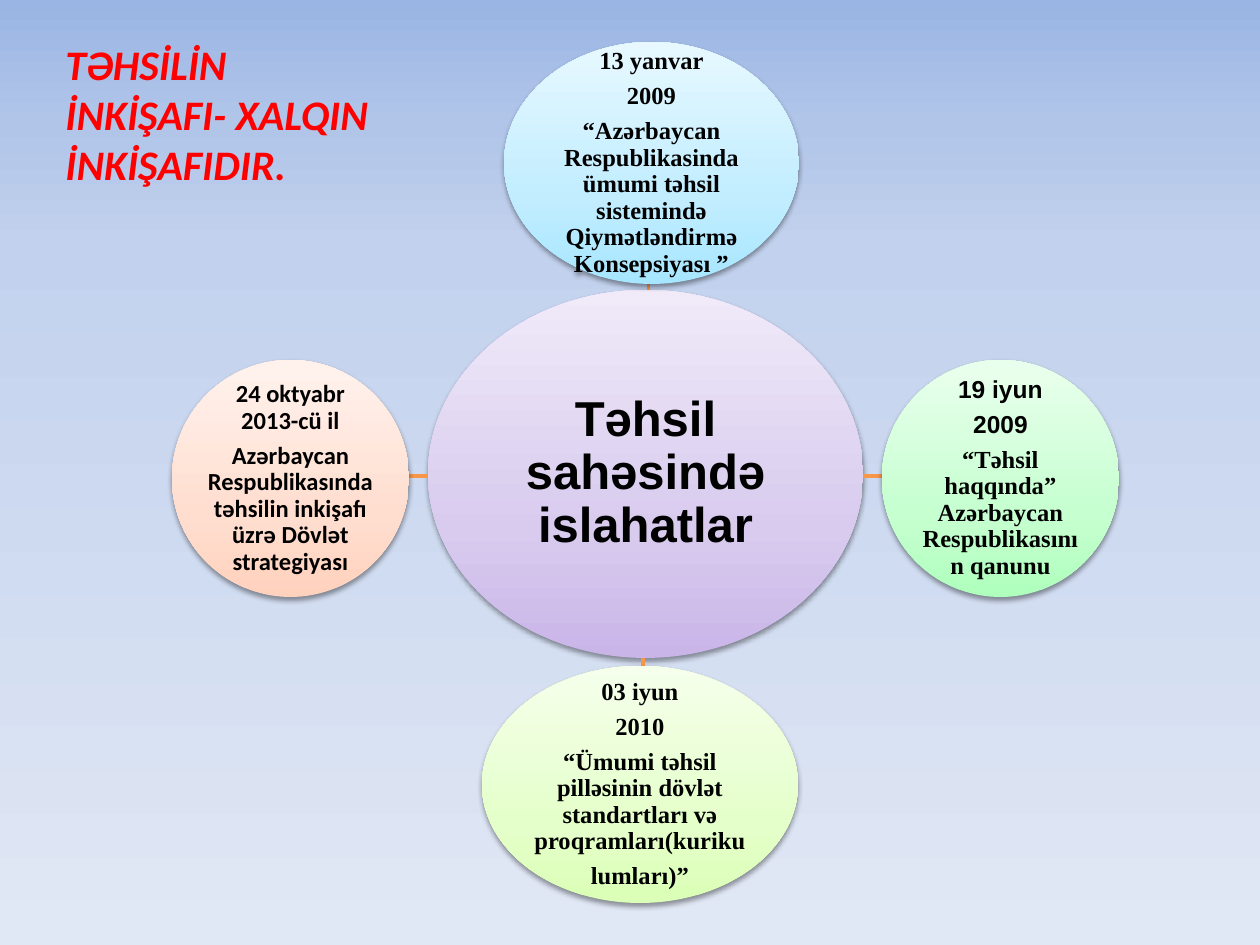
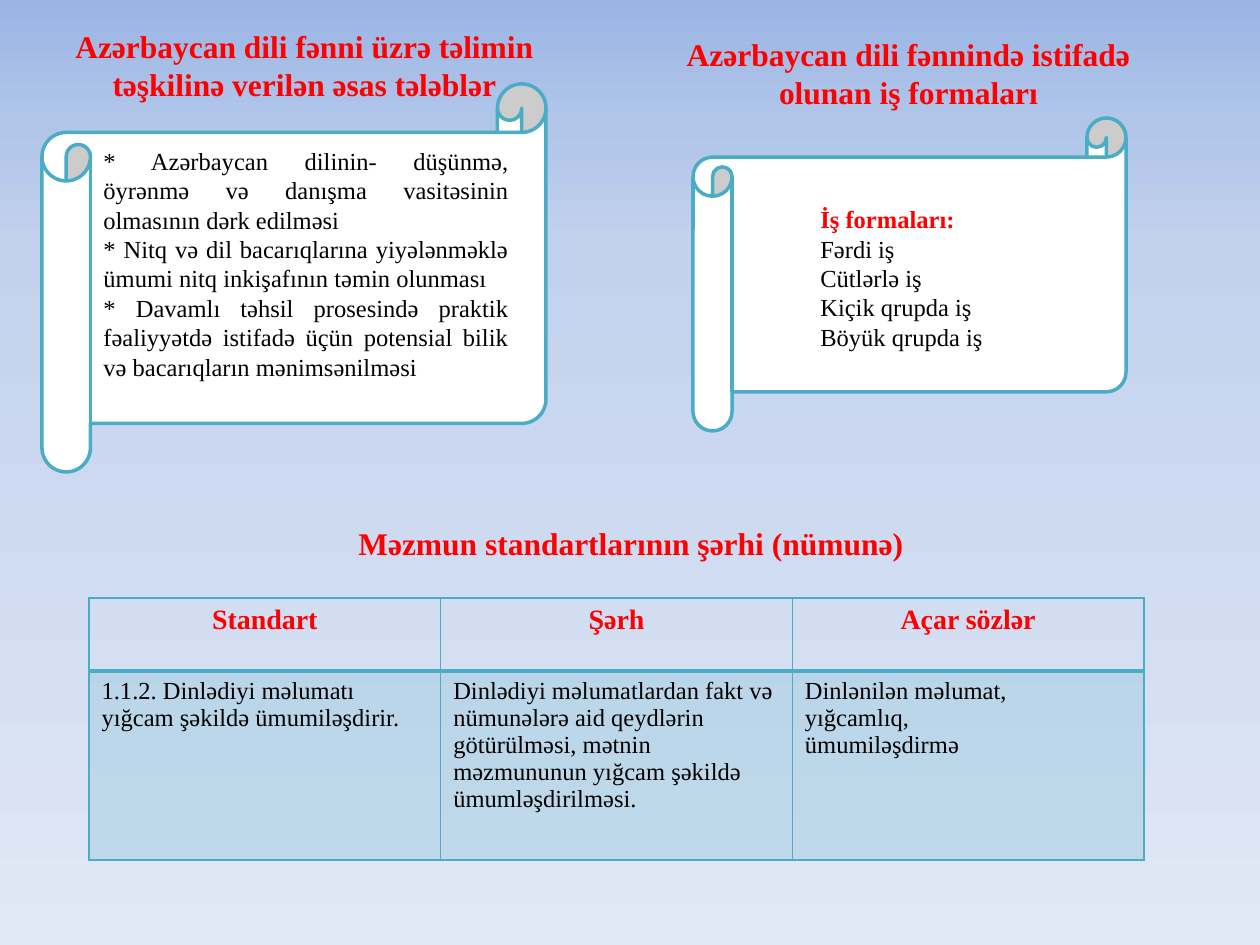
from dataclasses import dataclass

from lxml.etree import SubElement
from pptx import Presentation
from pptx.dml.color import RGBColor
from pptx.enum.shapes import MSO_CONNECTOR, MSO_SHAPE
from pptx.enum.text import MSO_ANCHOR, PP_ALIGN
from pptx.oxml.ns import qn
from pptx.util import Emu, Pt

SCALE = 914400 / 126


@dataclass(frozen=True)
class Theme:
    """Colours, fonts and type sizes of the deck."""
    red: str = "FF0000"
    black: str = "000000"
    white: str = "FFFFFF"
    teal: str = "4BACC6"
    orange: str = "F79646"
    sky: tuple = ((0, "9AB5E4"), (13, "B1C5E9"), (26, "C2D1ED"), (100, "E1E8F5"))
    violet: tuple = ("C9B5E8", "D8CBEE", "F0EAF9")
    blue: tuple = ("A7E6FF", "C1EDFF", "E7F8FF")
    green: tuple = ("AFFFBD", "C6FFD0", "E9FFED")
    lime: tuple = ("DBFFB6", "E5FFCB", "F5FFEB")
    peach: tuple = ("FFD2BD", "FFDED0", "FFF2ED")
    serif: str = "Times New Roman"
    sans: str = "Arial"
    plain: str = "Calibri"
    body: int = 14
    label: int = 16
    head: int = 18
    title: int = 24
    hub: int = 28


T = Theme()


def px(*nums):
    """Turn px into EMU."""
    return [Emu(round(n * SCALE)) for n in nums]


def tint(host, hue, alpha=None):
    """Add a solid fill to an XML element, with alpha in percent."""
    color = SubElement(SubElement(host, qn("a:solidFill")), qn("a:srgbClr"), val=hue)
    if alpha:
        SubElement(color, qn("a:alpha"), val=str(alpha * 1000))


def shade(fill, root, stops, angle):
    """Give a fill a linear gradient of any number of stops."""
    fill.gradient()
    grad = root.find(".//" + qn("a:gradFill"))
    ramp = grad.find(qn("a:gsLst"))
    for old in list(ramp):
        ramp.remove(old)
    for place, hue in stops:
        stop = SubElement(ramp, qn("a:gs"), pos=str(place * 1000))
        SubElement(stop, qn("a:srgbClr"), val=hue)
    grad.find(qn("a:lin")).set("ang", str(angle * 60000))


def write(frame, *lines, size=T.body, font=T.serif, hue=T.black, bold=False,
          slant=False, align=PP_ALIGN.LEFT, lead=None, gap=0):
    """Add paragraphs of one format to a text frame."""
    for line in lines:
        first = frame.paragraphs[0]
        para = frame.add_paragraph() if first.runs else first
        para.alignment = align
        para.line_spacing = lead
        para.space_after = Pt(gap)
        run = para.add_run()
        run.text = line
        face = run.font
        face.size, face.name, face.bold, face.italic = Pt(size), font, bold, slant
        face.color.rgb = RGBColor.from_string(hue)


def pad(shape, side, base):
    """Wrap and centre a shape's text, with side and bottom insets in px."""
    frame = shape.text_frame
    frame.word_wrap = True
    frame.vertical_anchor = MSO_ANCHOR.MIDDLE
    frame.margin_left = frame.margin_right = px(side)[0]
    frame.margin_top, frame.margin_bottom = px(min(side, 6), base)
    return frame


def note(slide, box, *lines, **form):
    """Add a wrapped text box."""
    frame = slide.shapes.add_textbox(*px(*box)).text_frame
    frame.word_wrap = True
    write(frame, *lines, **form)
    return frame


def bubble(slide, box, hues):
    """Add a shaded ellipse with a soft shadow."""
    shape = slide.shapes.add_shape(MSO_SHAPE.OVAL, *px(*box))
    shape.line.fill.background()
    shade(shape.fill, shape._element, zip((0, 35, 100), hues), 270)
    effect = SubElement(shape._element.spPr, qn("a:effectLst"))
    cast = SubElement(effect, qn("a:outerShdw"), blurRad=str(Pt(3.1)),
                      dist=str(Pt(1.6)), dir="5400000", rotWithShape="0")
    color = SubElement(cast, qn("a:srgbClr"), val=T.black)
    SubElement(color, qn("a:alpha"), val="38000")
    return pad(shape, 1, 1)


def spoke(slide, hub, node):
    """Draw a line across the gap between two boxes."""
    mids, gaps = [], []
    for axis in (0, 1):
        ends = [(b[axis], b[axis] + b[axis + 2]) for b in (hub, node)]
        mids.append(sum(map(sum, ends)) / 4)
        clear = max(a for a, _ in ends) >= min(z for _, z in ends)
        gaps.append(sorted(ends[0] + ends[1])[1:3] if clear else None)
    (x1, x2), (y1, y2) = (gap or (mid, mid) for gap, mid in zip(gaps, mids))
    line = slide.shapes.add_connector(MSO_CONNECTOR.STRAIGHT, *px(x1, y1, x2, y2))
    line.line.color.rgb = RGBColor.from_string(T.orange)
    line.line.width = Pt(2)
    SubElement(line._element.spPr, qn("a:effectLst"))


def scroll(slide, box):
    """Add a white scroll with a teal edge."""
    shape = slide.shapes.add_shape(MSO_SHAPE.HORIZONTAL_SCROLL, *px(*box))
    shape.shadow.inherit = False
    shape.fill.solid()
    shape.fill.fore_color.rgb = RGBColor.from_string(T.white)
    shape.line.color.rgb = RGBColor.from_string(T.teal)
    shape.line.width = Pt(2)
    return pad(shape, 13, 35)


def edge(cell, base):
    """Draw teal borders on a cell, with its own bottom width."""
    props = cell._tc.get_or_add_tcPr()
    for side, width in zip("LRTB", (1, 1, 1, base)):
        tint(SubElement(props, qn("a:ln" + side), w=str(Pt(width))), T.teal)
    return props


def grid(slide, box, heads, cells, tall):
    """Add a table with one head row and one body row."""
    table = slide.shapes.add_table(2, len(heads), *px(*box)).table
    table.first_row = table.horz_banding = False
    for row, high in zip(table.rows, px(*tall)):
        row.height = high
    for col, (head, lines) in enumerate(zip(heads, cells)):
        top, low = table.cell(0, col), table.cell(1, col)
        write(top.text_frame, head, size=T.label, hue=T.red, bold=True,
              align=PP_ALIGN.CENTER)
        write(low.text_frame, *lines)
        edge(top, 2)
        top.fill.background()
        tint(edge(low, 1), T.teal, 20)


def page(deck):
    """Add a blank slide with the sky gradient."""
    slide = deck.slides.add_slide(deck.slide_layouts[6])
    shade(slide.background.fill, slide._element, T.sky, 90)
    return slide


def reforms(deck):
    """Build the slide with the ring of reforms."""
    slide = page(deck)
    hub = (428, 290, 435, 368)
    nodes = (
        ((504, 42, 295, 242), T.blue, T.serif, ("13 yanvar", "2009"), T.serif,
         ("“Azərbaycan Respublikasinda ümumi təhsil sistemində "
          "Qiymətləndirmə Konsepsiyası ”",)),
        ((882, 360, 237, 237), T.green, T.sans, ("19 iyun", "2009"), T.serif,
         ("“Təhsil haqqında” Azərbaycan Respublikasının qanunu",)),
        ((482, 666, 316, 237), T.lime, T.serif, ("03 iyun", "2010"), T.serif,
         ("“Ümumi təhsil pilləsinin dövlət standartları və proqramları(kuriku",
          "lumları)”")),
        ((172, 360, 237, 237), T.peach, T.plain, ("24 oktyabr 2013-cü il",), T.plain,
         ("Azərbaycan Respublikasında təhsilin inkişafı üzrə Dövlət strategiyası",)),
    )
    form = dict(bold=True, align=PP_ALIGN.CENTER, lead=0.9)
    write(bubble(slide, hub, T.violet), "Təhsil sahəsində islahatlar",
          size=T.hub, font=T.sans, gap=0.35 * T.hub, **form)
    for box, hues, face, dates, font, lines in nodes:
        spoke(slide, hub, box)
        frame = bubble(slide, box, hues)
        write(frame, *dates, font=face, gap=0.35 * T.body, **form)
        write(frame, *lines, font=font, gap=0.35 * T.body, **form)
    note(slide, (53, 32, 346, 165), "TƏHSİLİN İNKİŞAFI- XALQIN İNKİŞAFIDIR.",
         size=T.title, font=T.plain, hue=T.red, bold=True, slant=True)


def lessons(deck):
    """Build the slide with the scrolls and the table."""
    slide = page(deck)
    head = dict(size=T.head, hue=T.red, bold=True)
    write(scroll(slide, (42, 84, 504, 388)),
          "* Azərbaycan dilinin- düşünmə, öyrənmə və danışma vasitəsinin "
          "olmasının dərk edilməsi",
          "* Nitq və dil bacarıqlarına yiyələnməklə ümumi nitq inkişafının "
          "təmin olunması",
          "* Davamlı təhsil prosesində praktik fəaliyyətdə istifadə üçün "
          "potensial bilik və bacarıqların mənimsənilməsi",
          align=PP_ALIGN.JUSTIFY)
    scroll(slide, (693, 118, 433, 313))
    note(slide, (42, 21, 525, 90),
         "Azərbaycan dili fənni üzrə təlimin təşkilinə verilən əsas tələblər",
         align=PP_ALIGN.CENTER, **head)
    note(slide, (653, 29, 511, 90),
         "Azərbaycan dili fənnində istifadə olunan iş formaları",
         align=PP_ALIGN.CENTER, **head)
    forms = note(slide, (808, 198, 213, 161), "İş formaları:", hue=T.red, bold=True)
    write(forms, "Fərdi iş", "Cütlərlə iş", "Kiçik qrupda iş", "Böyük qrupda iş")
    note(slide, (346, 518, 577, 50), "Məzmun standartlarının şərhi (nümunə)", **head)
    grid(slide, (89, 598, 1055, 262), ("Standart", "Şərh", "Açar sözlər"),
         (("1.1.2. Dinlədiyi məlumatı", "yığcam şəkildə ümumiləşdirir."),
          ("Dinlədiyi məlumatlardan fakt və nümunələrə aid qeydlərin "
           "götürülməsi, mətnin", "məzmununun yığcam şəkildə ümumləşdirilməsi."),
          ("Dinlənilən məlumat,", "yığcamlıq,", "ümumiləşdirmə")), (73, 189))


def main():
    """Build the deck and save it."""
    deck = Presentation()
    deck.slide_width, deck.slide_height = px(1260, 945)
    reforms(deck)
    lessons(deck)
    deck.save("out.pptx")


if __name__ == "__main__":
    main()
